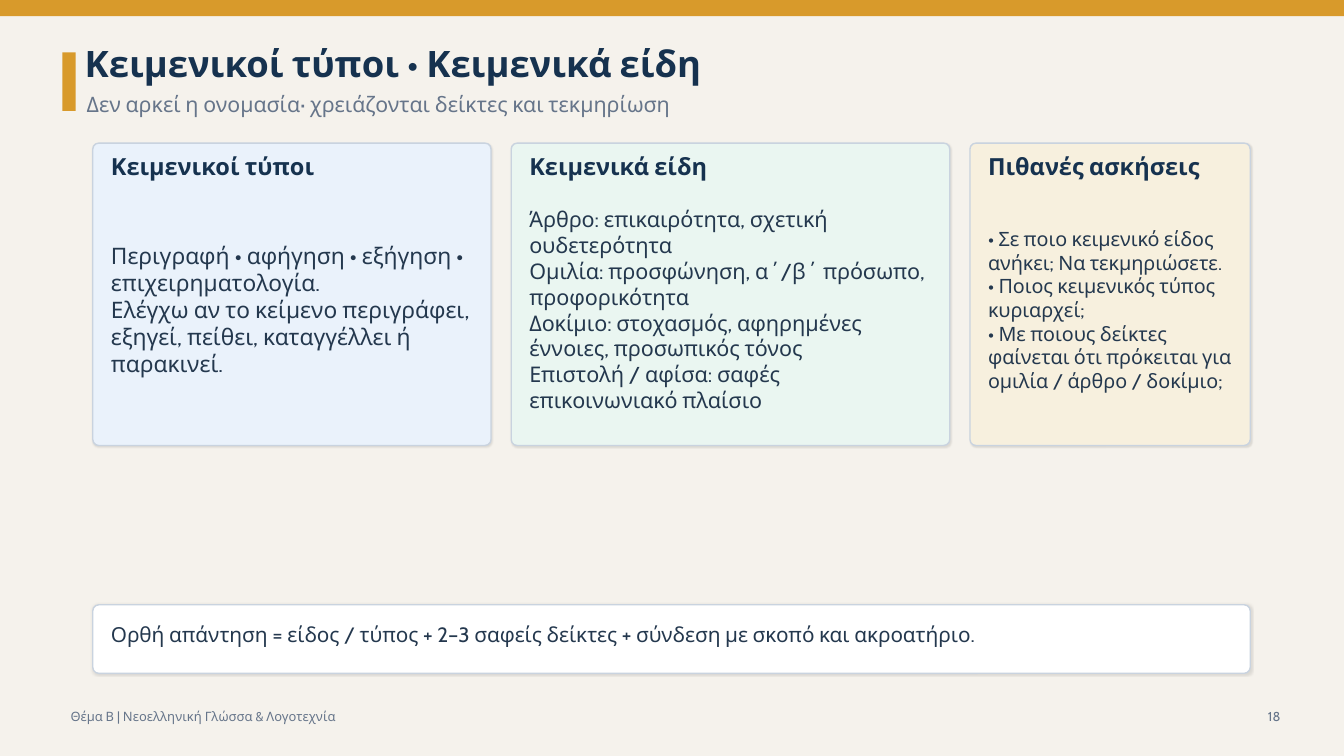
"""Build the slide on text types and text genres."""
from lxml import etree
from pptx import Presentation
from pptx.dml.color import RGBColor
from pptx.enum.shapes import MSO_SHAPE
from pptx.enum.text import MSO_ANCHOR, MSO_AUTO_SIZE, PP_ALIGN
from pptx.oxml.ns import qn
from pptx.util import Inches, Pt

RECTANGLE, ROUNDED = MSO_SHAPE.RECTANGLE, MSO_SHAPE.ROUNDED_RECTANGLE
MIDDLE, NO_FIT = MSO_ANCHOR.MIDDLE, MSO_AUTO_SIZE.NONE
LEFT, RIGHT = PP_ALIGN.LEFT, PP_ALIGN.RIGHT

FONT = "Cabin"
COLORS = {
    "background": "F5F2EC", "accent": "D89A2B", "heading": "16324F",
    "body": "24384E", "muted": "66758A", "border": "C9D3DF",
    "blue": "EAF2FB", "green": "EAF6F1", "sand": "F7F0DE",
    "white": "FFFFFF", "shadow": "000000",
}

TITLE = "Κειμενικοί τύποι • Κειμενικά είδη"
SUBTITLE = "Δεν αρκεί η ονομασία· χρειάζονται δείκτες και τεκμηρίωση"
FOOTER = "Θέμα Β | Νεοελληνική Γλώσσα & Λογοτεχνία"
PAGE_NUMBER = "18"
TAKEAWAY = ("Ορθή απάντηση = είδος / τύπος + 2–3 σαφείς δείκτες + "
            "σύνδεση με σκοπό και ακροατήριο.")
CARDS = [
    {"heading": "Κειμενικοί τύποι", "fill": "blue", "width": 3.95, "size": 16.2,
     "lines": ["Περιγραφή • αφήγηση • εξήγηση • επιχειρηματολογία.",
               "Ελέγχω αν το κείμενο περιγράφει, εξηγεί, πείθει, "
               "καταγγέλλει ή παρακινεί."]},
    {"heading": "Κειμενικά είδη", "fill": "green", "width": 4.35, "size": 15.4,
     "lines": ["Άρθρο: επικαιρότητα, σχετική ουδετερότητα",
               "Ομιλία: προσφώνηση, α΄/β΄ πρόσωπο, προφορικότητα",
               "Δοκίμιο: στοχασμός, αφηρημένες έννοιες, προσωπικός τόνος",
               "Επιστολή / αφίσα: σαφές επικοινωνιακό πλαίσιο"]},
    {"heading": "Πιθανές ασκήσεις", "fill": "sand", "width": 2.78, "size": 14.1,
     "lines": ["• Σε ποιο κειμενικό είδος ανήκει; Να τεκμηριώσετε.",
               "• Ποιος κειμενικός τύπος κυριαρχεί;",
               "• Με ποιους δείκτες φαίνεται ότι πρόκειται για "
               "ομιλία / άρθρο / δοκίμιο;"]},
]
CARD_LEFT, CARD_TOP, CARD_HEIGHT = 0.92, 1.42, 3
CARD_GAP, PADDING, RADIUS = 0.2, 0.18, 0.06
TAKEAWAY_TOP, TAKEAWAY_HEIGHT = 6, 0.68


def color(name):
    return RGBColor.from_string(COLORS[name])


def add_bar(page, left, top, width, height):
    bar = page.shapes.add_shape(RECTANGLE, *map(Inches, (left, top, width, height)))
    bar.shadow.inherit = False
    bar.fill.solid()
    bar.fill.fore_color.rgb = color("accent")
    bar.line.fill.background()


def add_panel(page, left, top, width, height, fill):
    panel = page.shapes.add_shape(ROUNDED, *map(Inches, (left, top, width, height)))
    panel.adjustments[0] = RADIUS / min(width, height)
    panel.fill.solid()
    panel.fill.fore_color.rgb = color(fill)
    panel.line.color.rgb = color("border")
    panel.line.width = Pt(1)
    panel.shadow.inherit = False
    effects = panel.element.spPr.find(qn("a:effectLst"))
    shadow = etree.SubElement(
        effects, qn("a:outerShdw"), blurRad=str(Pt(1.2)), dist=str(Pt(0.5)),
        dir=str(45 * 60000), algn="ctr", rotWithShape="0")
    tint = etree.SubElement(shadow, qn("a:srgbClr"), val=COLORS["shadow"])
    etree.SubElement(tint, qn("a:alpha"), val="10000")


def write(page, area, lines, size, tone, bold=False, align=LEFT, holder=None):
    left, top, width, height = map(Inches, area)
    box = holder or page.shapes.add_textbox(left, top, width, height)
    box.left, box.top, box.width, box.height = left, top, width, height
    page.shapes.element.append(box.element)
    frame = box.text_frame
    frame.word_wrap = True
    frame.auto_size = NO_FIT
    frame.vertical_anchor = MIDDLE
    frame.margin_left = frame.margin_right = 0
    frame.margin_top = frame.margin_bottom = 0
    for index, line in enumerate(lines):
        para = frame.add_paragraph() if index else frame.paragraphs[0]
        para.alignment = align
        para.space_before = para.space_after = Pt(0)
        if holder:
            properties = para._p.get_or_add_pPr()
            properties.set("marL", "0")
            properties.set("indent", "0")
            etree.SubElement(properties, qn("a:buNone"))
        span = para.add_run()
        span.text = line
        span.font.name = FONT
        span.font.size = Pt(size)
        span.font.bold = bold
        span.font.color.rgb = color(tone)


def main():
    deck = Presentation()
    deck.slide_width, deck.slide_height = Inches(13.33), Inches(7.5)
    page = deck.slides.add_slide(deck.slide_layouts.get_by_name("Comparison"))
    page.background.fill.solid()
    page.background.fill.fore_color.rgb = color("background")
    title, *bodies = list(page.placeholders)

    add_bar(page, 0, 0, 13.33, 0.16)
    add_bar(page, 0.62, 0.52, 0.13, 0.58)
    write(page, (0.84, 0.42, 9.6, 0.4), [TITLE], 26, "heading", True, holder=title)
    write(page, (0.86, 0.92, 10.8, 0.22), [SUBTITLE], 15.2, "muted")
    write(page, (0.7, 7.01, 4.9, 0.2), [FOOTER], 9.2, "muted")
    write(page, (12.3, 7.01, 0.4, 0.2), [PAGE_NUMBER], 9.2, "muted", align=RIGHT)

    left = CARD_LEFT
    for card, body in zip(CARDS, bodies):
        add_panel(page, left, CARD_TOP, card["width"], CARD_HEIGHT, card["fill"])
        text_left, text_width = left + PADDING, card["width"] - 2 * PADDING
        write(page, (text_left, CARD_TOP + 0.12, text_width, 0.22),
              [card["heading"]], 16.8, "heading", True)
        write(page, (text_left, CARD_TOP + 0.42, text_width, 2.46),
              card["lines"], card["size"], "body", holder=body)
        left += card["width"] + CARD_GAP

    row_width = left - CARD_GAP - CARD_LEFT
    add_panel(page, CARD_LEFT, TAKEAWAY_TOP, row_width, TAKEAWAY_HEIGHT, "white")
    write(page, (CARD_LEFT + PADDING, TAKEAWAY_TOP + 0.03, row_width - 2 * PADDING, 0.53),
          [TAKEAWAY], 14.8, "body", holder=bodies[-1])
    deck.save("out.pptx")


if __name__ == "__main__":
    main()
